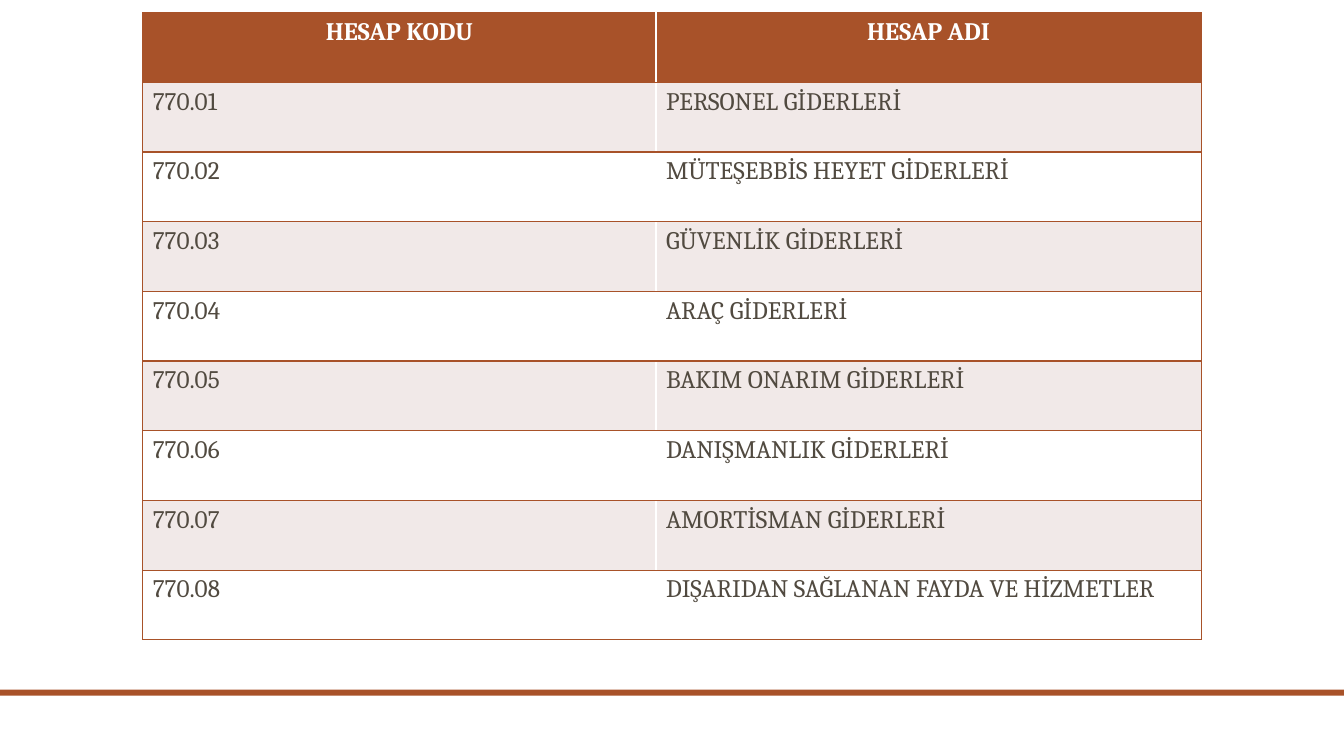
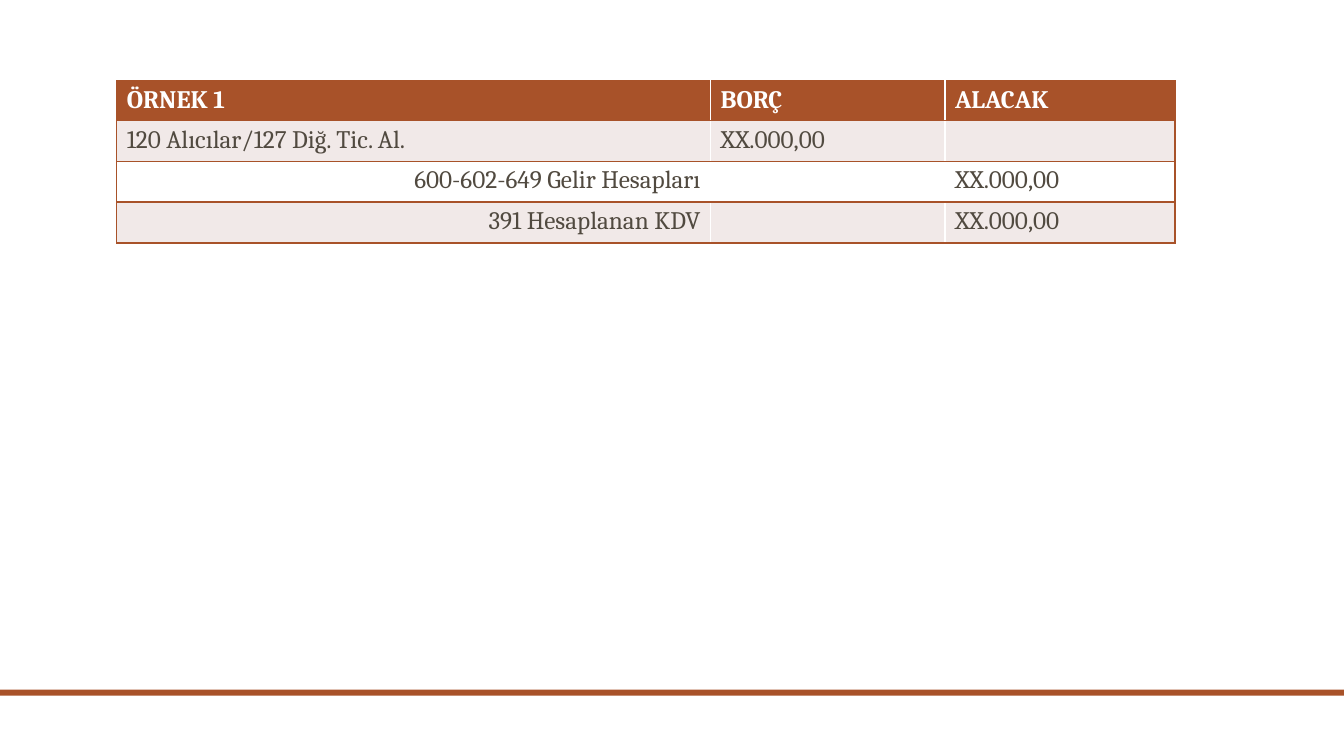
from dataclasses import dataclass

import lxml.etree
import pptx
import pptx.dml.color
import pptx.enum.shapes
import pptx.enum.text
import pptx.oxml.ns
import pptx.util

Align = pptx.enum.text.PP_ALIGN


@dataclass(frozen=True)
class Theme:
    accent: str = "A85229"
    stripe: str = "F1E9E8"
    plain: str = "FFFFFF"
    body_text: str = "514A40"
    header_text: str = "FFFFFF"
    font: str = "Cambria"
    text_size: int = 18
    border_width: int = 1


@dataclass(frozen=True)
class Grid:
    columns: int = 160
    rows: int = 90
    unit: float = 1 / 12

    def length(self, units: float) -> int:
        return pptx.util.Inches(units * self.unit)


@dataclass(frozen=True)
class Entry:
    text: str
    alignment: Align = Align.LEFT


@dataclass(frozen=True)
class AccountTable:
    left: float
    top: float
    column_widths: tuple[float, ...]
    row_height: float
    rows: tuple[tuple[Entry, ...], ...]


THEME = Theme()
GRID = Grid()
BAND_TOP = 82.1
BAND_HEIGHT = 0.72

EXPENSES = (
    "PERSONEL GİDERLERİ",
    "MÜTEŞEBBİS HEYET GİDERLERİ",
    "GÜVENLİK GİDERLERİ",
    "ARAÇ GİDERLERİ",
    "BAKIM ONARIM GİDERLERİ",
    "DANIŞMANLIK GİDERLERİ",
    "AMORTİSMAN GİDERLERİ",
    "DIŞARIDAN SAĞLANAN FAYDA VE HİZMETLER",
)
AMOUNT = Entry("XX.000,00")
EMPTY = Entry("")

TABLES = (
    AccountTable(
        left=17,
        top=1.5,
        column_widths=(61.1, 64.9),
        row_height=8.3,
        rows=(
            (Entry("HESAP KODU", Align.CENTER), Entry("HESAP ADI", Align.CENTER)),
            *(
                (Entry(f"770.{number:02d}"), Entry(name))
                for number, name in enumerate(EXPENSES, start=1)
            ),
        ),
    ),
    AccountTable(
        left=13.9,
        top=9.6,
        column_widths=(70.7, 27.9, 27.4),
        row_height=4.72,
        rows=(
            (Entry("ÖRNEK 1"), Entry("BORÇ"), Entry("ALACAK")),
            (Entry("120 Alıcılar/127 Diğ. Tic. Al."), AMOUNT, EMPTY),
            (Entry("600-602-649 Gelir Hesapları", Align.RIGHT), EMPTY, AMOUNT),
            (Entry("391 Hesaplanan KDV", Align.RIGHT), EMPTY, AMOUNT),
        ),
    ),
)


def color(value: str) -> pptx.dml.color.RGBColor:
    return pptx.dml.color.RGBColor.from_string(value)


def add_band(slide: pptx.slide.Slide) -> None:
    band = slide.shapes.add_shape(
        pptx.enum.shapes.MSO_SHAPE.RECTANGLE,
        0,
        GRID.length(BAND_TOP),
        GRID.length(GRID.columns),
        GRID.length(BAND_HEIGHT),
    )
    band.shadow.inherit = False
    band.fill.solid()
    band.fill.fore_color.rgb = color(THEME.accent)
    band.line.fill.background()


def add_borders(cell: pptx.table._Cell, sides: str) -> None:
    qualified = pptx.oxml.ns.qn
    properties = cell._tc.get_or_add_tcPr()
    for side in sides:
        line = lxml.etree.SubElement(
            properties,
            qualified(f"a:ln{side}"),
            w=str(pptx.util.Pt(THEME.border_width)),
        )
        fill = lxml.etree.SubElement(line, qualified("a:solidFill"))
        lxml.etree.SubElement(fill, qualified("a:srgbClr"), val=THEME.accent)


def fill_cell(cell: pptx.table._Cell, entry: Entry, row: int) -> None:
    is_header = row == 0
    cell.fill.solid()
    cell.fill.fore_color.rgb = color(
        THEME.accent if is_header else THEME.stripe if row % 2 else THEME.plain
    )
    if not entry.text:
        return
    paragraph = cell.text_frame.paragraphs[0]
    paragraph.alignment = entry.alignment
    run = paragraph.add_run()
    run.text = entry.text
    text_format = {
        "name": THEME.font,
        "size": pptx.util.Pt(THEME.text_size),
        "bold": is_header,
    }
    for attribute, value in text_format.items():
        setattr(run.font, attribute, value)
    run.font.color.rgb = color(THEME.header_text if is_header else THEME.body_text)


def add_account_table(slide: pptx.slide.Slide, content: AccountTable) -> None:
    row_count = len(content.rows)
    last_column = len(content.column_widths) - 1
    table = slide.shapes.add_table(
        row_count,
        last_column + 1,
        GRID.length(content.left),
        GRID.length(content.top),
        GRID.length(sum(content.column_widths)),
        GRID.length(content.row_height * row_count),
    ).table
    for column, width in zip(table.columns, content.column_widths):
        column.width = GRID.length(width)
    for row, entries in enumerate(content.rows):
        table.rows[row].height = GRID.length(content.row_height)
        for column, entry in enumerate(entries):
            cell = table.cell(row, column)
            left = "L" if column == 0 else ""
            right = "R" if column == last_column else ""
            add_borders(cell, left + right + "TB")
            fill_cell(cell, entry, row)


def main() -> None:
    presentation = pptx.Presentation()
    presentation.slide_width = GRID.length(GRID.columns)
    presentation.slide_height = GRID.length(GRID.rows)
    blank_layout = presentation.slide_layouts[6]
    for content in TABLES:
        slide = presentation.slides.add_slide(blank_layout)
        add_band(slide)
        add_account_table(slide, content)
    presentation.save("out.pptx")


if __name__ == "__main__":
    main()
